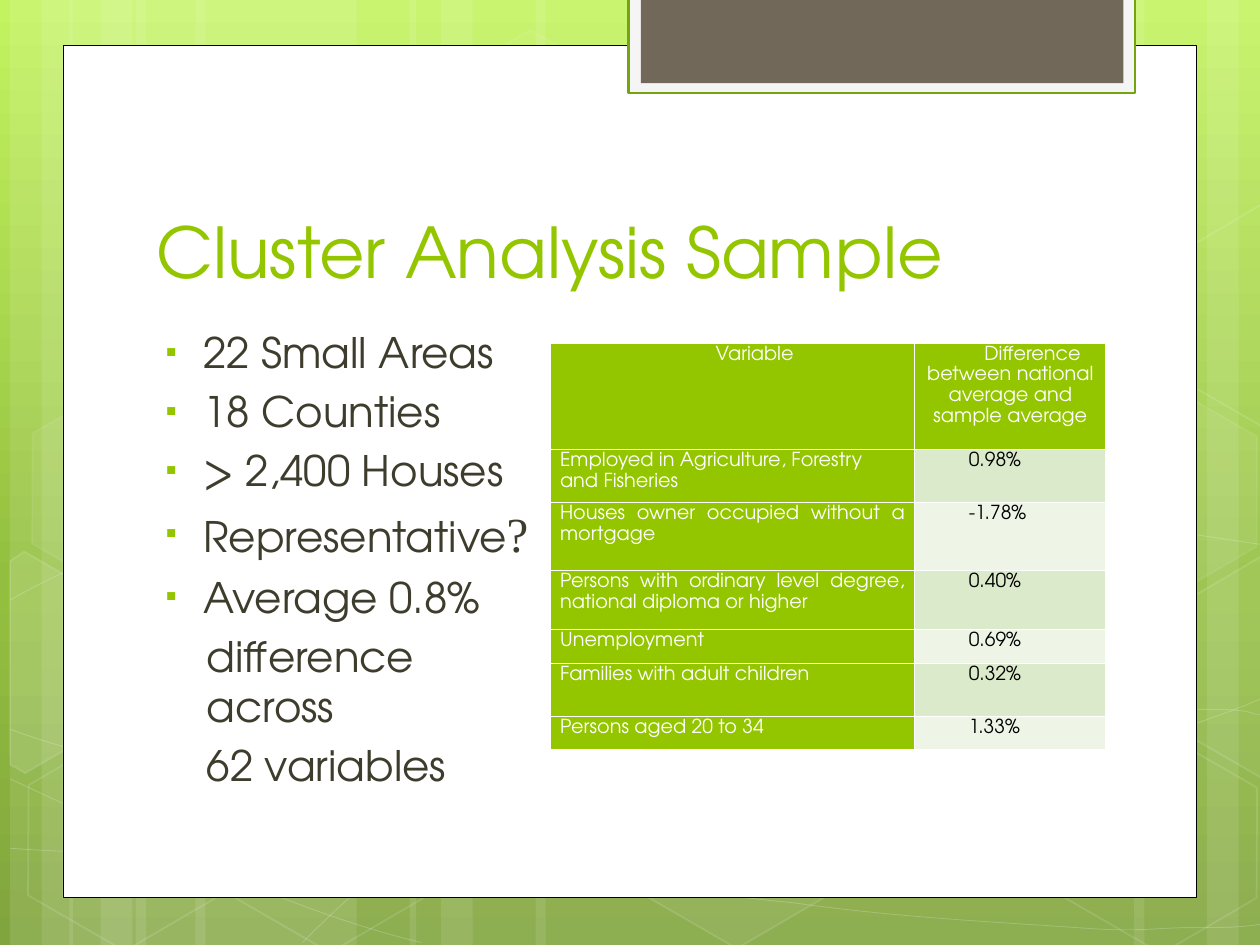
from copy import deepcopy

from pptx import Presentation
from pptx.dml.color import RGBColor
from pptx.enum.shapes import MSO_SHAPE as Preset
from pptx.enum.text import MSO_ANCHOR as Anchor, PP_ALIGN as Align
from pptx.oxml.ns import qn
from pptx.oxml.xmlchemy import OxmlElement as Element
from pptx.util import Cm, Pt

SANS, SERIF = "TeX Gyre Adventor", "Times New Roman"
GREEN, WHITE, BLACK, INK = "94C600", "FFFFFF", "000000", "3E3D2D"
BANDS = ("DCEACC", "EEF5E7")

TITLE = "Cluster Analysis Sample"
# Each paragraph: bulleted?, then its runs as (text, size, font)
POINTS = [
    (True, [("22 Small Areas", 24, SANS)]),
    (True, [("18 Counties", 24, SANS)]),
    (True, [("> 2,400 Houses", 24, SANS)]),
    (True, [("Representative", 24, SANS), ("?", 28, SERIF)]),
    (True, [("Average 0.8%", 24, SANS)]),
    (False, [("difference across", 24, SANS)]),
    (False, [("62 variables", 24, SANS)]),
]
HEADER = ("Variable", "Difference between national average and sample average")
ROWS = [
    ("Employed in Agriculture, Forestry and Fisheries", "0.98%"),
    ("Houses owner occupied without a mortgage", "-1.78%"),
    ("Persons with ordinary level degree, national diploma or higher", "0.40%"),
    ("Unemployment", "0.69%"),
    ("Families with adult children", "0.32%"),
    ("Persons aged 20 to 34", "1.33%"),
]
COLUMN_WIDTHS = (7.34, 3.86)
ROW_HEIGHTS = (2.08, 1.07, 1.37, 1.19, 0.68, 1.07, 0.67)

# Background decoration, in centimetres
SKY = [(0, "C3F35F"), (0.62, "93BF3F"), (1, "81A53E")]
STRIPES = [  # left, width
    (2.74, 4.45), (0.2, 1.27), (0.84, 2.11), (3.94, 4.45), (1.4, 1.27), (2.03, 2.11),
    (18.62, 4.45), (24.33, 1.27), (22.86, 2.11), (10.8, 7.82), (8.26, 1.27), (8.89, 2.11),
]
CURVES = [  # start point, then three Bezier points for each segment
    [(0.2, 17.1), (1.5, 17.2), (2.9, 17.2), (4.8, 17.2), (6.7, 17.2), (9.1, 17.1), (11.6, 16.9),
     (14.2, 16.6), (17.8, 16.2), (20.1, 15.7), (22.4, 15.2), (24.8, 14.4), (25.6, 14)],
    [(0.2, 12.1), (0.9, 11.7), (1.7, 11.3), (3.1, 10.9), (4.5, 10.6), (6.6, 10), (8.8, 9.8),
     (11.1, 9.7), (13.8, 9.6), (16.6, 9.8), (19.4, 10), (24.1, 10.8), (25.6, 11)],
    [(0.2, 15.7), (3.2, 17.1), (6.3, 18.5), (8.5, 19)],
    [(0.2, 14.7), (1, 15), (1.8, 15.2), (3.3, 15.6), (4.7, 16), (6.9, 16.7), (9.1, 17.1),
     (11.2, 17.5), (13.8, 18), (16, 18.2), (18.1, 18.5), (20.3, 18.6), (21.7, 18.7),
     (23, 18.8), (23.3, 18.7), (24, 18.7), (24.7, 18.7), (25.1, 18.7), (25.6, 18.6)],
    [(6.1, 19), (6.6, 18.5), (7.1, 18), (7.7, 17.6), (8.3, 17.1), (9.1, 16.6), (9.9, 16.2),
     (10.6, 15.9), (11, 15.7), (11.9, 15.5), (12.9, 15.2), (14.6, 14.9), (15.4, 14.7),
     (16.4, 14.5), (16.5, 14.5), (17.3, 14.5), (18.1, 14.4), (19.3, 14.3), (20.2, 14.3),
     (21.1, 14.3), (22.5, 14.3), (22.5, 14.3), (23, 14.3), (23.6, 14.3), (24.2, 14.3),
     (24.7, 14.3), (25.1, 14.3), (25.3, 14.4), (25.5, 14.4), (25.5, 14.4), (25.6, 14.4)],
]
HEXAGONS = [  # left, top, fill opacity, line opacity
    (8.48, 0.91, 4, 8), (12.62, 14.96, 6, 12), (0.28, 15.01, 0, 12), (0.36, 7.92, 7, 8),
    (4.42, 15.04, 0, 12), (19.13, 11.51, 10, 12), (21.18, 15.06, 0, 12), (21.18, 7.98, 7, 8),
]
# Hexagons cut at the slide's edge, before they are turned
LEFT_CUT = [(0, 0.31), (0.15, 0), (2.4, 0), (3.5, 1.94), (2.4, 3.86), (2.05, 3.86)]
RIGHT_CUT = [(0, 1.91), (1.08, 0), (1.32, 0), (3.44, 3.67), (3.33, 3.86), (1.1, 3.86)]
CUT_HEXAGONS = [  # left, top, corners, fill opacity
    (-0.84, 11.66, LEFT_CUT, 10), (23.29, 11.28, RIGHT_CUT, 4), (23.29, 4.19, RIGHT_CUT, 0),
]
TILT = 30


def rgb(color):
    return RGBColor.from_string(color)


def paint(fill, color, opacity=100):
    if not opacity:
        fill.background()
        return
    fill.solid()
    fill.fore_color.rgb = rgb(color)
    if opacity < 100:
        alpha = Element("a:alpha")
        alpha.set("val", str(opacity * 1000))
        fill._xPr.find(qn("a:solidFill"))[0].append(alpha)


def finish(shape, fill, opacity=100, line=None, width=1, line_opacity=100):
    shape.shadow.inherit = False
    paint(shape.fill, fill, opacity)
    paint(shape.line.fill, line or fill, line_opacity if line else 0)
    if line:
        shape.line.width = Pt(width)


def add_block(left, top, width, height, preset=Preset.RECTANGLE):
    return slide.shapes.add_shape(preset, Cm(left), Cm(top), Cm(width), Cm(height))


def add_outline(points, close):
    (x, y), *rest = [(x * 100, y * 100) for x, y in points]
    builder = slide.shapes.build_freeform(x, y, scale=Cm(1) / 100)
    builder.add_line_segments(rest, close=close)
    return builder.convert_to_shape()


def add_curve(points):
    """Draw the points as an outline, then join each three steps into one Bezier segment."""
    curve = add_outline(points, False)
    outline = curve._element.find(".//" + qn("a:path"))
    steps = outline.findall(qn("a:lnTo"))
    for i in range(0, len(steps), 3):
        segment = Element("a:cubicBezTo")
        for step in steps[i:i + 3]:
            segment.append(step[0])
            outline.remove(step)
        outline.append(segment)
    return curve


def add_run(paragraph, text, size, color, font=SANS):
    run = paragraph.add_run()
    run.text = text
    run.font.size, run.font.name = Pt(size), font
    run.font.color.rgb = rgb(color)


def indent(paragraph, margin, first):
    props = paragraph._p.get_or_add_pPr()
    props.set("marL", str(Cm(margin)))
    props.set("indent", str(Cm(first)))
    return props


def element(tag, **attributes):
    item = Element(tag)
    for key, value in attributes.items():
        item.set(key, value)
    return item


def add_bullet(props):
    color = element("a:buClr")
    color.append(element("a:srgbClr", val=GREEN))
    props.extend([color, element("a:buSzPct", val="76000"),
                  element("a:buFont", typeface=SERIF), element("a:buChar", char="▪")])


def add_frame(left, top, width, height):
    frame = slide.shapes.add_textbox(Cm(left), Cm(top), Cm(width), Cm(height)).text_frame
    frame.word_wrap = True
    return frame


def fill_cell(cell, text, fill, color, align, first_indent):
    cell.margin_left = cell.margin_right = Cm(0.19)
    cell.margin_top = cell.margin_bottom = 0
    paragraph = cell.text_frame.paragraphs[0]
    paragraph.alignment, paragraph.line_spacing = align, 1.15
    indent(paragraph, 0, first_indent)
    add_run(paragraph, text, 11, color)
    props = cell._tc.get_or_add_tcPr()
    for side in ("a:lnL", "a:lnR", "a:lnT", "a:lnB"):
        border, solid = element(side, w=str(Pt(1))), element("a:solidFill")
        solid.append(element("a:srgbClr", val=WHITE))
        border.append(solid)
        props.append(border)
    paint(cell.fill, fill)


deck = Presentation()
deck.slide_width, deck.slide_height = Cm(25.4), Cm(19.05)
slide = deck.slides.add_slide(deck.slide_layouts[6])

sky = slide.background.fill
sky.gradient()
sky.gradient_angle = 270
stops = slide._element.find(".//" + qn("a:gsLst"))
stops.append(deepcopy(stops[-1]))
for stop, (position, color) in zip(sky.gradient_stops, SKY):
    stop.position, stop.color.rgb = position, rgb(color)

for left, width in STRIPES:
    finish(add_block(left, 0, width, 19.05), WHITE, 10)
for curve in CURVES:
    finish(add_curve(curve), WHITE, 0, WHITE, 0.5, 20)
for left, top, opacity, line_opacity in HEXAGONS:
    hexagon = add_block(left, top, 4.45, 3.86, Preset.HEXAGON)
    hexagon.adjustments[0] = 0.285
    hexagon.rotation = TILT
    finish(hexagon, WHITE, opacity, WHITE, 1, line_opacity)
for left, top, corners, opacity in CUT_HEXAGONS:
    hexagon = add_outline([(left + x, top + y) for x, y in corners], True)
    hexagon.rotation = TILT
    finish(hexagon, WHITE, opacity, WHITE, 1, 12)

finish(add_block(1.27, 0.91, 22.86, 17.19), WHITE, line=BLACK, width=0.5)
finish(add_block(12.67, -0.05, 10.21, 1.93), "F5F5F5", line="74A510", width=1.25)
finish(add_block(12.92, -0.05, 9.73, 1.73), "71685A")

title = add_frame(2.9, 2.84, 19.51, 3.18)
title.vertical_anchor = Anchor.BOTTOM
add_run(title.paragraphs[0], TITLE, 40, GREEN)

points = add_frame(2.9, 6.45, 8.2, 9.75)
for i, (bulleted, runs) in enumerate(POINTS):
    point = points.add_paragraph() if i else points.paragraphs[0]
    point.space_before = Pt(5)
    if bulleted:
        add_bullet(indent(point, 0.95, -0.76))
    else:
        indent(point, 1.02, 0)
    for text, size, font in runs:
        add_run(point, text, size, INK, font)

sample = slide.shapes.add_table(len(ROW_HEIGHTS), 2, Cm(11.1), Cm(6.92),
                                Cm(sum(COLUMN_WIDTHS)), Cm(sum(ROW_HEIGHTS))).table
for column, width in zip(sample.columns, COLUMN_WIDTHS):
    column.width = Cm(width)
for row, height in zip(sample.rows, ROW_HEIGHTS):
    row.height = Cm(height)
for c, text in enumerate(HEADER):
    fill_cell(sample.cell(0, c), text, GREEN, WHITE, Align.CENTER, 0.89)
for r, (variable, difference) in enumerate(ROWS, 1):
    align = Align.LEFT if r == 1 else Align.JUSTIFY
    fill_cell(sample.cell(r, 0), variable, GREEN, WHITE, align, 0)
    fill_cell(sample.cell(r, 1), difference, BANDS[(r - 1) % 2], BLACK, Align.JUSTIFY, 0.9)

deck.save("out.pptx")
